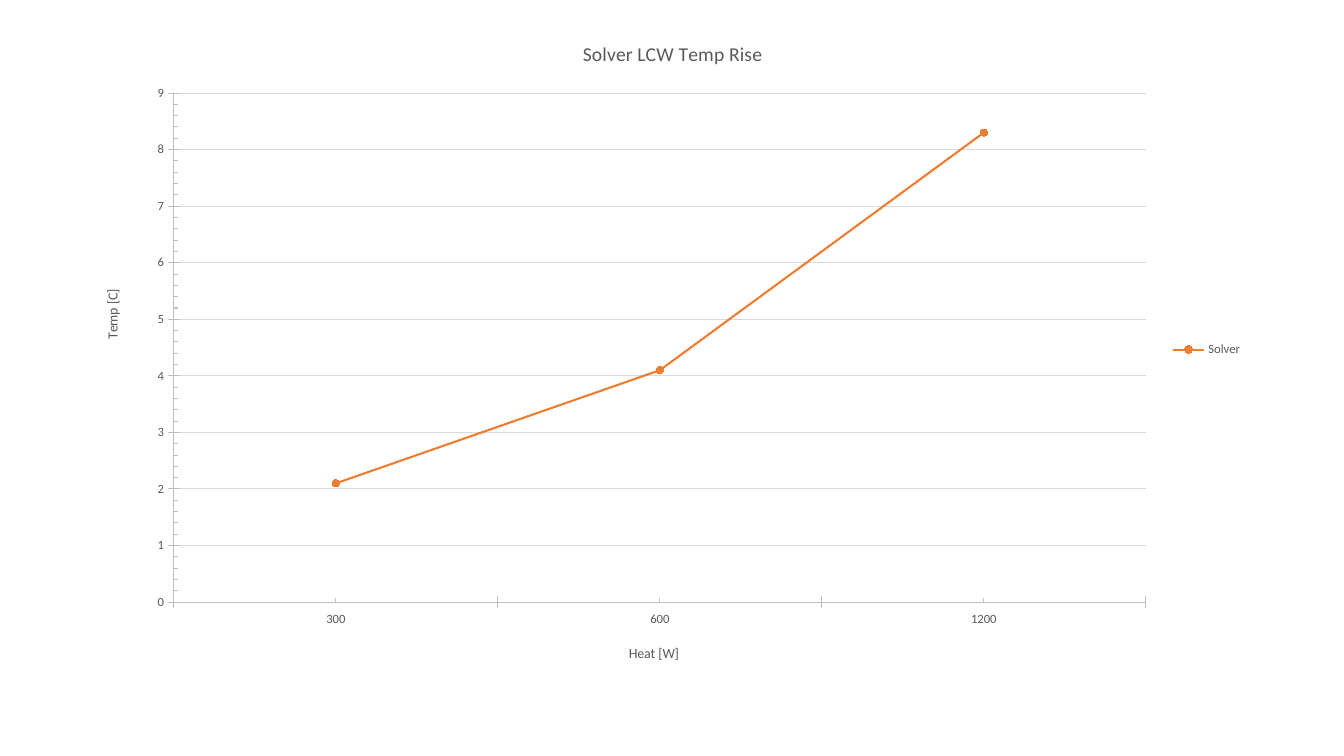
from dataclasses import dataclass

from pptx import Presentation
from pptx.chart.data import CategoryChartData
from pptx.dml.color import RGBColor
from pptx.enum.chart import XL_CHART_TYPE, XL_LEGEND_POSITION, XL_MARKER_STYLE, XL_TICK_MARK
from pptx.oxml.ns import qn
from pptx.oxml.xmlchemy import OxmlElement
from pptx.util import Emu, Inches, Pt

COLORS = {
    "black": "000000",
    "text": "595959",
    "axis": "BFBFBF",
    "grid": "D9D9D9",
    "series": "ED7D31",
}
FONT_NAME = "Calibri"
SLIDE_WIDTH, SLIDE_HEIGHT = Inches(13.33), Inches(7.5)


@dataclass(frozen=True)
class Area:
    """A rectangle in shares of its container."""

    left: float
    top: float
    width: float = 0
    height: float = 0


@dataclass(frozen=True)
class AxisStyle:
    title: str
    title_area: Area


CHART_AREA = Area(0.069, 0.024, 0.863, 0.877)
PLOT_AREA = Area(0.07, 0.113, 0.838, 0.768)
HEAT_AXIS = AxisStyle("Heat [W]", Area(0.46, 0.94))
TEMPERATURE_AXIS = AxisStyle("Temp [C]", Area(0.007, 0.405))


def color(name: str) -> RGBColor:
    return RGBColor.from_string(COLORS[name])


def format_font(font, size: float, color_name: str = "text") -> None:
    font.name = FONT_NAME
    font.size = Pt(size)
    font.bold = False
    font.color.rgb = color(color_name)


def format_line(line, color_name: str, width: float) -> None:
    line.color.rgb = color(color_name)
    line.width = Pt(width)


def write_text(text_frame, text: str, *, size: float) -> None:
    text_frame.text = text
    format_font(text_frame.paragraphs[0].runs[0].font, size)


def place_element(element, area: Area, position: int, target: str = "") -> None:
    """Give a chart part a manual layout, inserted at its schema position."""
    for previous in element.findall(qn("c:layout")):
        element.remove(previous)
    layout = OxmlElement("c:layout")
    manual = OxmlElement("c:manualLayout")
    settings = {"xMode": "edge", "yMode": "edge", "x": area.left, "y": area.top}
    if target:
        settings = {"layoutTarget": target, **settings}
    if area.width:
        settings |= {"w": area.width, "h": area.height}
    for tag, value in settings.items():
        setting = OxmlElement(f"c:{tag}")
        setting.set("val", str(value))
        manual.append(setting)
    layout.append(manual)
    element.insert(position, layout)


def style_axis(axis, style: AxisStyle) -> None:
    write_text(axis.axis_title.text_frame, style.title, size=10)
    place_element(axis.axis_title.element, style.title_area, 1)
    axis.major_tick_mark = XL_TICK_MARK.CROSS
    axis.minor_tick_mark = XL_TICK_MARK.INSIDE
    format_font(axis.tick_labels.font, 9)
    format_line(axis.format.line, "axis", 0.75)


def style_series(series) -> None:
    series.smooth = False
    format_line(series.format.line, "series", 1.5)
    marker = series.marker
    marker.style = XL_MARKER_STYLE.CIRCLE
    marker.size = 5
    marker.format.fill.solid()
    marker.format.fill.fore_color.rgb = color("series")
    format_line(marker.format.line, "series", 0.75)


def add_temperature_chart(slide) -> None:
    data = CategoryChartData()
    data.categories = ["300", "600", "1200"]
    data.add_series("Solver", [2.1, 4.1, 8.3])
    chart = slide.shapes.add_chart(
        XL_CHART_TYPE.LINE_MARKERS,
        Emu(round(SLIDE_WIDTH * CHART_AREA.left)),
        Emu(round(SLIDE_HEIGHT * CHART_AREA.top)),
        Emu(round(SLIDE_WIDTH * CHART_AREA.width)),
        Emu(round(SLIDE_HEIGHT * CHART_AREA.height)),
        data,
    ).chart
    format_font(chart.font, 10, "black")
    write_text(chart.chart_title.text_frame, "Solver LCW Temp Rise", size=14)
    chart.chart_title.include_in_layout = False

    chart.has_legend = True
    chart.legend.position = XL_LEGEND_POSITION.RIGHT
    chart.legend.include_in_layout = False
    format_font(chart.legend.font, 9)

    style_axis(chart.category_axis, HEAT_AXIS)
    value_axis = chart.value_axis
    style_axis(value_axis, TEMPERATURE_AXIS)
    value_axis.minimum_scale, value_axis.maximum_scale = 0, 9
    value_axis.major_unit, value_axis.minor_unit = 1, 0.2
    value_axis.has_major_gridlines = True
    format_line(value_axis.major_gridlines.format.line, "grid", 0.75)

    plot = chart.plots[0]
    plot.vary_by_categories = False
    style_series(plot.series[0])
    place_element(chart.element.find(f".//{qn('c:plotArea')}"), PLOT_AREA, 0, "inner")


def main() -> None:
    presentation = Presentation()
    presentation.slide_width, presentation.slide_height = SLIDE_WIDTH, SLIDE_HEIGHT
    slide = presentation.slides.add_slide(presentation.slide_layouts[6])
    add_temperature_chart(slide)
    presentation.save("out.pptx")


if __name__ == "__main__":
    main()
